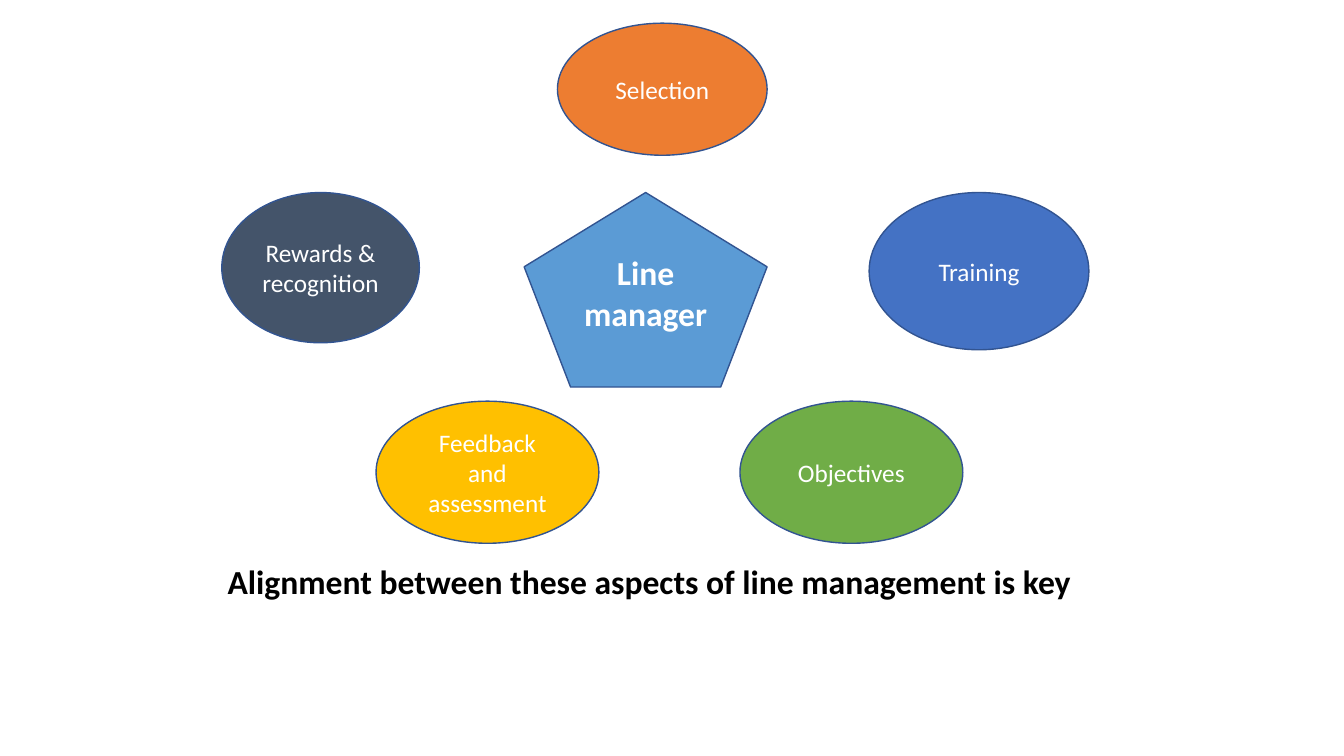
from pptx import Presentation
from pptx.dml.color import RGBColor
from pptx.enum.shapes import MSO_SHAPE
from pptx.enum.text import MSO_ANCHOR, PP_ALIGN
from pptx.util import Inches, Pt

OVAL = MSO_SHAPE.OVAL
PENTAGON = MSO_SHAPE.REGULAR_PENTAGON
MIDDLE = MSO_ANCHOR.MIDDLE
CENTER = PP_ALIGN.CENTER
LEFT = PP_ALIGN.LEFT

BLANK_LAYOUT = 6
COLORS = {
    "slate": "44546A", "green": "70AD47", "orange": "ED7D31", "blue": "4472C4",
    "gold": "FFC000", "sky": "5B9BD5", "outline": "325491",
    "white": "FFFFFF", "black": "000000",
}

# Tops of the rows and the shared size of the lower ovals, in percent of the slide
UPPER_ROW = 25.47
LOWER_ROW = 53.07
LOWER_SIZE = (16.58, 18.8)

ASPECTS = [
    ("Rewards &\nrecognition", "slate", (16.5, UPPER_ROW, 14.7, 19.87)),
    ("Objectives", "green", (55.06, LOWER_ROW, *LOWER_SIZE)),
    ("Selection", "orange", (41.48, 3.07, 15.6, 17.47)),
    ("Training", "blue", (64.67, UPPER_ROW, 16.35, 20.8)),
    ("Feedback and assessment", "gold", (27.98, LOWER_ROW, *LOWER_SIZE)),
]


class SlideBuilder:
    """Draws styled elements; boxes are left, top, width, height in percent."""

    font_name = "Calibri"

    def __init__(self, presentation):
        self.width = presentation.slide_width
        self.height = presentation.slide_height
        layout = presentation.slide_layouts[BLANK_LAYOUT]
        self.slide = presentation.slides.add_slide(layout)

    def place(self, box):
        """Turns a box in percent into slide lengths."""
        sides = (self.width, self.height) * 2
        return [round(side * share / 100) for side, share in zip(sides, box)]

    def fill_text(self, frame, text, size, color, alignment, bold):
        frame.word_wrap = True
        frame.text = text
        for paragraph in frame.paragraphs:
            paragraph.alignment = alignment
            font = paragraph.font
            font.name = self.font_name
            font.size = Pt(size)
            font.bold = bold
            font.color.rgb = RGBColor.from_string(COLORS[color])

    def shape(self, kind, text, fill, box, size=18, bold=False):
        shape = self.slide.shapes.add_shape(kind, *self.place(box))
        shape.shadow.inherit = False
        shape.fill.solid()
        shape.fill.fore_color.rgb = RGBColor.from_string(COLORS[fill])
        shape.line.color.rgb = RGBColor.from_string(COLORS["outline"])
        shape.line.width = Pt(1)
        shape.text_frame.vertical_anchor = MIDDLE
        self.fill_text(shape.text_frame, text, size, "white", CENTER, bold)
        return shape

    def text(self, text, box, size):
        text_box = self.slide.shapes.add_textbox(*self.place(box))
        self.fill_text(text_box.text_frame, text, size, "black", LEFT, True)


def main():
    presentation = Presentation()
    presentation.slide_width = Inches(13.33)
    presentation.slide_height = Inches(7.5)
    builder = SlideBuilder(presentation)

    for label, color, box in ASPECTS:
        builder.shape(OVAL, label, color, box)
    builder.text("Alignment between these aspects of line management is key",
                 (16.2, 73.47, 65.94, 6.67), 24)
    manager = builder.shape(PENTAGON, "Line manager", "sky",
                            (39, UPPER_ROW, 18.08, 25.73), 24, True)
    manager.text_frame.margin_bottom = Inches(0.45)

    presentation.save("out.pptx")


if __name__ == "__main__":
    main()
